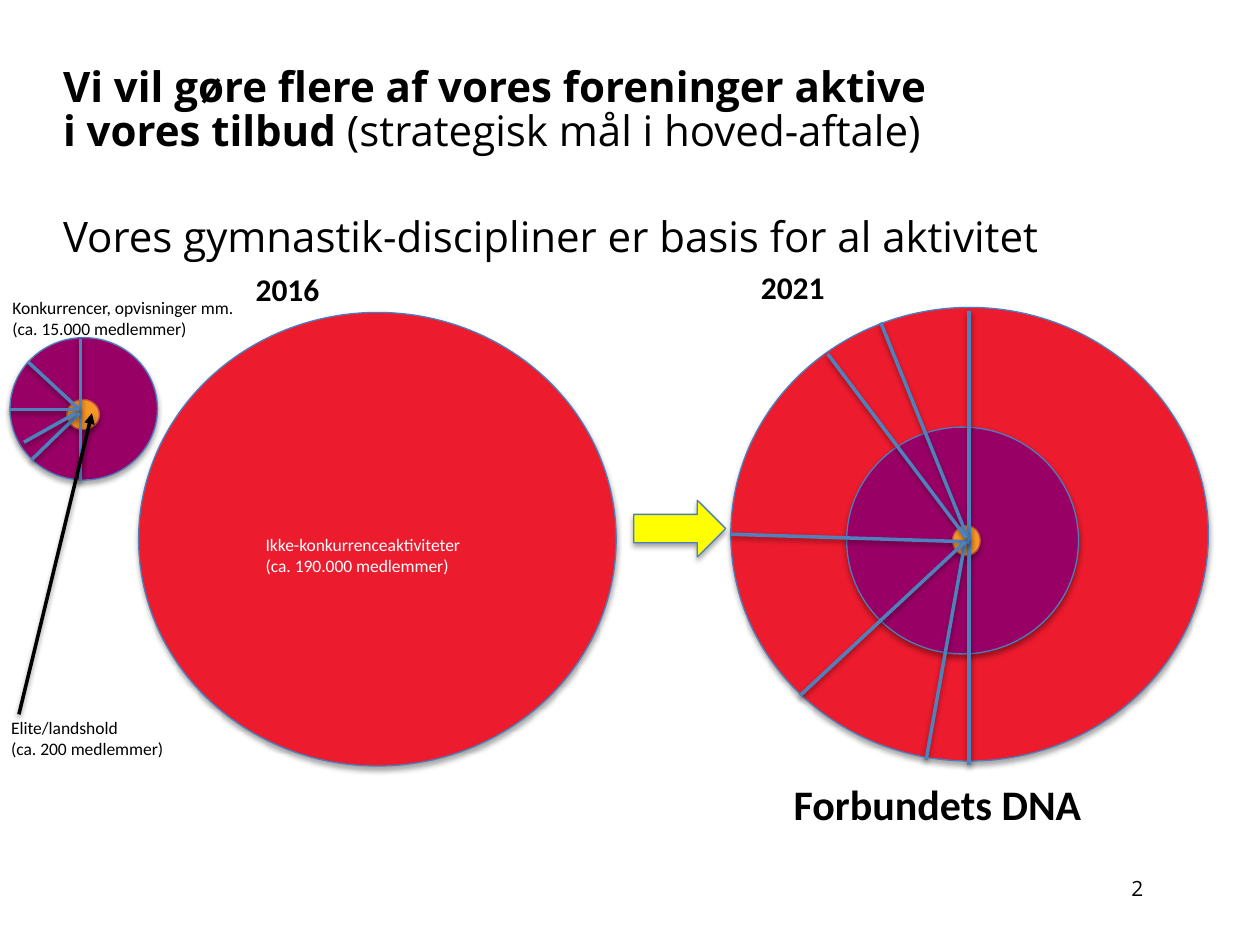
from lxml.etree import SubElement
from pptx import Presentation
from pptx.dml.color import RGBColor
from pptx.enum.shapes import MSO_CONNECTOR, MSO_SHAPE
from pptx.enum.text import MSO_ANCHOR, MSO_AUTO_SIZE, PP_ALIGN
from pptx.oxml.ns import qn
from pptx.util import Inches, Pt

BLACK = RGBColor(0, 0, 0)
WHITE = RGBColor(255, 255, 255)
RED = RGBColor(0xEC, 0x1B, 0x2E)
PURPLE = RGBColor(0x99, 0x00, 0x66)
ORANGE = RGBColor(0xF8, 0x97, 0x28)
YELLOW = RGBColor(255, 255, 0)
OUTLINE = RGBColor(0x4B, 0x7E, 0xBC)
RUST = RGBColor(0xBF, 0x4C, 0x48)
SPOKE = RGBColor(0x4F, 0x81, 0xBD)

TITLE = [("Vi vil gøre flere af vores foreninger aktive i vores tilbud ", True),
         ("(strategisk mål i hoved-aftale)", False)]
BODY = "Vores gymnastik-discipliner er basis for al aktivitet"

# Each shape: preset, (left, top, width, height), fill, outline
OVAL = MSO_SHAPE.OVAL
RINGS_2021 = [
    (OVAL, (5.8, 2.44, 3.79, 3.6), RED, OUTLINE),
    (OVAL, (6.72, 3.39, 1.84, 1.8), PURPLE, OUTLINE),
    (OVAL, (7.56, 4.17, 0.22, 0.24), ORANGE, RUST),
]
RINGS_2016 = [
    (OVAL, (0.08, 2.68, 1.17, 1.13), PURPLE, OUTLINE),
    (OVAL, (0.53, 3.17, 0.26, 0.24), ORANGE, RUST),
]
FRONT_SHAPES = [
    (MSO_SHAPE.RIGHT_ARROW, (5.03, 3.97, 0.73, 0.45), YELLOW, OUTLINE),
    (OVAL, (1.1, 2.48, 3.79, 3.6), RED, OUTLINE),
]

# Each spoke: start point, end point
SPOKES_2021 = [
    ((7.69, 2.47), (7.69, 6.07)),
    ((7.69, 4.29), (6.99, 2.56)),
    ((7.69, 4.3), (5.8, 4.24)),
    ((6.57, 2.81), (7.67, 4.27)),
    ((7.66, 4.3), (7.35, 6.03)),
    ((6.35, 5.52), (7.66, 4.3)),
]
SPOKES_2016 = [
    ((0.64, 2.69), (0.64, 3.82)),
    ((0.63, 3.25), (0.22, 2.87)),
    ((0.63, 3.25), (0.08, 3.25)),
    ((0.63, 3.28), (0.25, 3.65)),
    ((0.19, 3.51), (0.6, 3.28)),
]
ELITE_POINTER = ((0.15, 5.67), (0.73, 3.28))

# Each label: lines, (left, top, width, height), size, bold, colour, font
LABELS = [
    (["Konkurrencer, opvisninger mm.", "(ca. 15.000 medlemmer)"],
     (0, 2.31, 2.36, 0.44), 10, False, BLACK, "Calibri"),
    (["2016"], (1.93, 2.09, 2.12, 0.4), 18, True, BLACK, "Calibri"),
    (["2021"], (5.94, 2.08, 1.77, 0.4), 18, True, BLACK, "Calibri"),
    (["Ikke-konkurrenceaktiviteter", "(ca. 190.000 medlemmer)"],
     (2.01, 4.19, 1.97, 0.44), 10, False, WHITE, "Calibri"),
    (["Elite/landshold", "(ca. 200 medlemmer)"],
     (-0.01, 5.64, 1.97, 0.44), 10, False, BLACK, "Calibri"),
    (["Forbundets DNA"], (6.2, 6.13, 3.02, 0.5), 24, True, BLACK, "Calibri"),
    (["2"], (8.88, 6.9, 0.62, 0.3), 12, False, BLACK, "Open Sans"),
]


def inches(lengths):
    return [Inches(length) for length in lengths]


def add_shadow(shape, distance, opacity):
    """Give a shape or connector a soft shadow straight below it."""
    properties = shape._element.spPr
    effects = properties.find(qn("a:effectLst"))
    if effects is None:
        effects = SubElement(properties, qn("a:effectLst"))
    shadow = SubElement(effects, qn("a:outerShdw"), blurRad=str(Pt(3.1)),
                        dist=str(Pt(distance)), dir="5400000", rotWithShape="0")
    colour = SubElement(shadow, qn("a:srgbClr"), val=str(BLACK))
    SubElement(colour, qn("a:alpha"), val=str(opacity * 1000))


def add_shapes(slide, shapes):
    for preset, place, fill, outline in shapes:
        shape = slide.shapes.add_shape(preset, *inches(place))
        shape.fill.solid()
        shape.fill.fore_color.rgb = fill
        shape.line.color.rgb = outline
        shape.line.width = Pt(0.75)
        shape.shadow.inherit = False
        add_shadow(shape, 1.8, 35)


def add_line(slide, start, end, colour):
    line = slide.shapes.add_connector(MSO_CONNECTOR.STRAIGHT, *inches(start + end))
    line.line.color.rgb = colour
    line.line.width = Pt(2)
    add_shadow(line, 1.6, 38)
    return line


def add_spokes(slide, spokes):
    for start, end in spokes:
        add_line(slide, start, end, SPOKE)


def set_font(font, name, size, colour):
    font.name = name
    font.size = Pt(size)
    font.color.rgb = colour


def add_label(slide, lines, place, size, bold, colour, name):
    frame = slide.shapes.add_textbox(*inches(place)).text_frame
    frame.word_wrap = True
    frame.text = "\n".join(lines)
    for para in frame.paragraphs:
        set_font(para.font, name, size, colour)
        para.font.bold = bold


def fit_placeholder(holder, place):
    """Move a placeholder, clear its margins and return its paragraph."""
    holder.left, holder.top, holder.width, holder.height = inches(place)
    frame = holder.text_frame
    frame.margin_left = frame.margin_top = frame.margin_right = frame.margin_bottom = 0
    frame.vertical_anchor = MSO_ANCHOR.TOP
    frame.auto_size = MSO_AUTO_SIZE.NONE
    frame.word_wrap = True
    para = frame.paragraphs[0]
    para.alignment = PP_ALIGN.LEFT
    para.line_spacing = 0.88
    para.space_before = Pt(0)
    return para


def main():
    deck = Presentation()
    deck.slide_width, deck.slide_height = Inches(10), Inches(7.5)
    slide = deck.slides.add_slide(deck.slide_layouts[1])

    title = fit_placeholder(slide.shapes.title, (0.5, 0.53, 6.9, 1.02))
    set_font(title.font, "Open Sans", 24, BLACK)
    for text, bold in TITLE:
        span = title.add_run()
        span.text = text
        span.font.bold = bold

    body = fit_placeholder(slide.placeholders[1], (0.5, 1.72, 9, 4.95))
    body.text = BODY
    properties = body._p.get_or_add_pPr()
    properties.set("marL", "0")
    properties.set("indent", "0")
    SubElement(properties, qn("a:buNone"))
    set_font(body.font, "Open Sans", 24, BLACK)

    add_shapes(slide, RINGS_2021)
    add_spokes(slide, SPOKES_2021)
    add_shapes(slide, RINGS_2016)
    add_spokes(slide, SPOKES_2016)
    add_shapes(slide, FRONT_SHAPES)

    pointer = add_line(slide, *ELITE_POINTER, BLACK)
    SubElement(pointer.line._get_or_add_ln(), qn("a:tailEnd"), type="triangle")

    for label in LABELS:
        add_label(slide, *label)

    deck.save("out.pptx")


if __name__ == "__main__":
    main()
